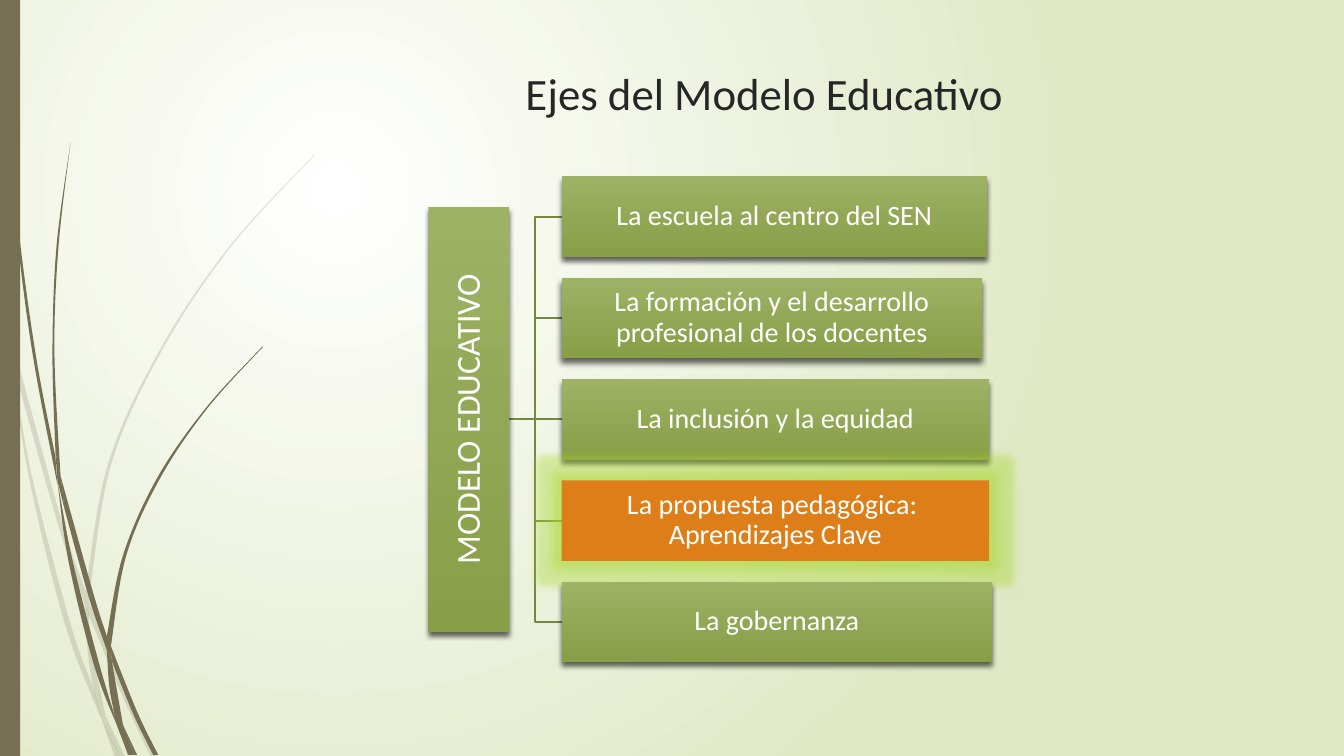
from lxml import etree
from pptx import Presentation
from pptx.dml.color import RGBColor
from pptx.enum.shapes import MSO_CONNECTOR, MSO_SHAPE
from pptx.enum.text import MSO_ANCHOR, PP_ALIGN
from pptx.oxml import parse_xml
from pptx.oxml.ns import qn
from pptx.util import Inches, Pt

RECTANGLE = MSO_SHAPE.RECTANGLE
ELBOW, STRAIGHT = MSO_CONNECTOR.ELBOW, MSO_CONNECTOR.STRAIGHT
TOP, MIDDLE = MSO_ANCHOR.TOP, MSO_ANCHOR.MIDDLE
CENTER = PP_ALIGN.CENTER
A_NS = "http://schemas.openxmlformats.org/drawingml/2006/main"
P_NS = "http://schemas.openxmlformats.org/presentationml/2006/main"

FONT = "Calibri"
BROWN, ORANGE, GLOW, LINE = "766F54", "DE7E18", "A8D62E", "75883D"
GREENS = ("9DB265", "889E47")
BACKGROUND = ("FFFFFF", "DFE8C4")
TITLE = "Ejes del Modelo Educativo"
ROOT = "MODELO EDUCATIVO"
AXES = [
    ("La escuela al centro del SEN", 4.22, False),
    ("La formación y el desarrollo profesional de los docentes", 4.17, False),
    ("La inclusión y la equidad", 4.24, False),
    ("La propuesta pedagógica: \nAprendizajes Clave", 4.24, True),
    ("La gobernanza", 4.27, False),
]
AXIS_LEFT, AXIS_TOP, AXIS_PITCH, BOX_HEIGHT = 5.57, 1.75, 4.02 / 4, 0.8
ROOT_LENGTH, ROOT_RIGHT, CENTER_Y = 4.22, 5.05, 4.16
UNITS = 1000

PALE_BLADES = [
    ([(0, 2.82), (0.09, 3.22), (0.11, 3.5)], [(0.1, 3.44), (0, 2.99)]),
    ([(0.14, 3.45), (0.62, 5.2), (0.85, 5.86)], [(0.84, 5.99), (0.58, 5.22), (0.17, 3.76)]),
    ([(0.88, 5.96), (1.27, 6.92), (1.55, 7.51)], [(1.5, 7.51), (1.23, 6.94), (0.88, 6.1)]),
    ([(1.05, 7.11), (1.24, 7.51)], [(1.19, 7.51)]),
    ([(0.11, 3.5), (0.31, 4.69), (0.7, 6.19), (0.93, 6.83)],
     [(1.01, 7.14), (0.65, 6.21), (0.28, 4.7), (0.11, 3.5)]),
    ([(0.84, 5.99), (0.87, 6.46), (0.93, 6.83), (1.05, 7.11)], [(0.91, 6.46), (0.88, 6.08)]),
    ([(0.88, 5.96), (1.1, 4.62), (1.6, 3.49), (2.29, 2.45), (3.12, 1.54)],
     [(3.12, 1.53), (2.28, 2.44), (1.58, 3.48), (1.07, 4.61), (0.85, 5.86)]),
    ([(1.01, 7.14), (1.14, 7.51)], [(1.19, 7.51)]),
    ([(0.88, 6.1), (0.88, 5.96)], [(0.85, 5.86), (0.84, 5.99)]),
    ([(0.93, 6.83), (1.01, 7.14), (1.19, 7.51)], [(1.05, 7.11), (0.96, 6.92)]),
]
DARK_BLADES = [
    ([(0.04, 0), (0.08, 1.09), (0.19, 2.32), (0.36, 3.55), (0.55, 4.53)],
     [(0.57, 4.81), (0.33, 3.55), (0.17, 2.33), (0.07, 1.1), (0.03, 0)]),
    ([(0.6, 4.72), (0.93, 5.9), (1.06, 6.31)], [(1.06, 6.45), (0.88, 5.92), (0.64, 5.05)]),
    ([(1.1, 6.41), (1.36, 7.06), (1.57, 7.49)], [(1.52, 7.49), (1.32, 7.08), (1.11, 6.56)]),
    ([(0.57, 4.77), (0.72, 5.56), (0.98, 6.57), (1.16, 7.17)],
     [(1.17, 7.22), (0.93, 6.59), (0.68, 5.57), (0.57, 4.77)]),
    ([(0.6, 4.72), (0.54, 3.49), (0.58, 2.45), (0.7, 1.41)],
     [(0.7, 1.41), (0.56, 2.45), (0.52, 3.49), (0.55, 4.49)]),
    ([(1.22, 7.19), (1.36, 7.49)], [(1.33, 7.49)]),
    ([(0.55, 4.49), (0.6, 4.72), (0.64, 5.05)], [(0.57, 4.77)]),
    ([(1.1, 6.41), (1.25, 5.52), (1.58, 4.76), (2.05, 4.06), (2.61, 3.44)],
     [(2.6, 3.44), (2.04, 4.05), (1.56, 4.74), (1.22, 5.51), (1.06, 6.31)]),
    ([(1.17, 7.22), (1.27, 7.49)], [(1.31, 7.49)]),
    ([(1.06, 6.45), (1.1, 6.91), (1.22, 7.19)], [(1.11, 6.56)]),
    ([(1.06, 6.31), (1.1, 6.41), (1.11, 6.56)], [(1.06, 6.45)]),
    ([(1.1, 6.91), (1.17, 7.22), (1.3, 7.49)], [(1.33, 7.49), (1.22, 7.19)]),
]


def color(hex_value):
    return RGBColor.from_string(hex_value)


def paint(shape, hex_value):
    shape.shadow.inherit = False
    shape.fill.solid()
    shape.fill.fore_color.rgb = color(hex_value)
    shape.line.fill.background()


def add_effect(shape, tag, hex_value, alpha, **values):
    effects = shape._element.spPr.find(qn("a:effectLst"))
    effect = etree.SubElement(effects, qn(tag), values)
    tint = etree.SubElement(effect, qn("a:srgbClr"), val=hex_value)
    etree.SubElement(tint, qn("a:alpha"), val=str(alpha * 1000))


def handles(edge):
    padded = [edge[0], *edge, edge[-1]]
    for a, b, c, d in zip(padded, padded[1:], padded[2:], padded[3:]):
        yield ([q + (r - p) / 6 for p, q, r in zip(a, b, c)],
               [r - (s - q) / 6 for q, r, s in zip(b, c, d)])


def add_blade(page, alpha, edges):
    outline = [tuple(round(value * UNITS) for value in point) for edge in edges for point in edge]
    builder = page.shapes.build_freeform(*outline[0], scale=Inches(1) / UNITS)
    builder.add_line_segments(outline[1:], close=True)
    blade = builder.convert_to_shape()
    paint(blade, BROWN)
    origin = [min(values) for values in zip(*outline)]
    segments = list(blade._element.iter(qn("a:lnTo")))
    bends = [*handles(edges[0]), None, *handles(edges[1])]
    for segment, bend in zip(segments, bends):
        if bend:
            segment.tag = qn("a:cubicBezTo")
            for place, point in enumerate(bend):
                x, y = (str(round(v * UNITS - low)) for v, low in zip(point, origin))
                segment.insert(place, etree.Element(qn("a:pt"), x=x, y=y))
    if alpha < 100:
        tint = blade._element.spPr.find(qn("a:solidFill"))[0]
        etree.SubElement(tint, qn("a:alpha"), val=str(alpha * 1000))


def write(shape, text, size, hex_value, anchor, margin=None):
    frame = shape.text_frame
    settings = {"word_wrap": True, "vertical_anchor": anchor}
    if margin is not None:
        for side in ("left", "top", "right", "bottom"):
            settings["margin_" + side] = Inches(margin)
    for name, value in settings.items():
        setattr(frame, name, value)
    para = frame.paragraphs[0]
    para.text = text
    para.alignment = CENTER
    if anchor == MIDDLE:
        para.line_spacing = 0.9
    for span in para.runs:
        for name, value in {"name": FONT, "size": Pt(size)}.items():
            setattr(span.font, name, value)
        span.font.color.rgb = color(hex_value)


def add_box(page, left, top, width, text, size, margin, highlighted=False, angle=270):
    box = page.shapes.add_shape(RECTANGLE, *map(Inches, (left, top, width, BOX_HEIGHT)))
    paint(box, ORANGE)
    if highlighted:
        add_effect(box, "a:glow", GLOW, 40, rad=str(Pt(12)))
    else:
        box.fill.gradient()
        box.fill.gradient_angle = angle
        for stop, hex_value in zip(box.fill.gradient_stops, GREENS):
            stop.color.rgb = color(hex_value)
        add_effect(box, "a:outerShdw", "000000", 60, blurRad=str(Pt(4)),
                   dist=str(Pt(3)), dir="5400000", algn="ctr", rotWithShape="0")
    write(box, text, size, "FFFFFF", MIDDLE, margin)
    return box


def add_branch(page, end_y):
    kind = STRAIGHT if abs(end_y - CENTER_Y) < 0.02 else ELBOW
    target = CENTER_Y if kind == STRAIGHT else end_y
    branch = page.shapes.add_connector(kind, *map(Inches, (ROOT_RIGHT, CENTER_Y, AXIS_LEFT, target)))
    branch.line.width = Pt(1.25)
    branch.line.color.rgb = color(LINE)
    etree.SubElement(branch._element.spPr, qn("a:effectLst"))


def set_background(page):
    stops = "".join(f'<a:gs pos="{place}"><a:srgbClr val="{hex_value}"/></a:gs>'
                    for place, hex_value in zip((0, 100000), BACKGROUND))
    page._element.cSld.insert(0, parse_xml(
        f'<p:bg xmlns:p="{P_NS}" xmlns:a="{A_NS}"><p:bgPr><a:gradFill>'
        f'<a:gsLst>{stops}</a:gsLst><a:path path="circle">'
        '<a:fillToRect l="50000" t="50000" r="100000" b="100000"/></a:path>'
        '</a:gradFill><a:effectLst/></p:bgPr></p:bg>'))


def main():
    deck = Presentation()
    deck.slide_width, deck.slide_height = Inches(13.33), Inches(7.5)
    page = deck.slides.add_slide(deck.slide_layouts[6])
    set_background(page)
    for alpha, blades in ((20, PALE_BLADES), (100, DARK_BLADES)):
        for edges in blades:
            add_blade(page, alpha, edges)
    bar = page.shapes.add_shape(RECTANGLE, 0, 0, Inches(0.2), Inches(7.5))
    paint(bar, BROWN)
    title = page.shapes.add_textbox(*map(Inches, (4.24, 0.6, 6.68, 1.4)))
    write(title, TITLE, 32, "262626", TOP)
    tops = [AXIS_TOP + AXIS_PITCH * row for row in range(len(AXES))]
    for top in tops:
        add_branch(page, top + BOX_HEIGHT / 2)
    root_left = ROOT_RIGHT - (BOX_HEIGHT + ROOT_LENGTH) / 2
    root = add_box(page, root_left, CENTER_Y - BOX_HEIGHT / 2, ROOT_LENGTH, ROOT, 24, 0.02, angle=180)
    root.rotation = 270
    for top, (text, width, highlighted) in zip(tops, AXES):
        add_box(page, AXIS_LEFT, top, width, text, 20, 0.01, highlighted)
    deck.save("out.pptx")


if __name__ == "__main__":
    main()
